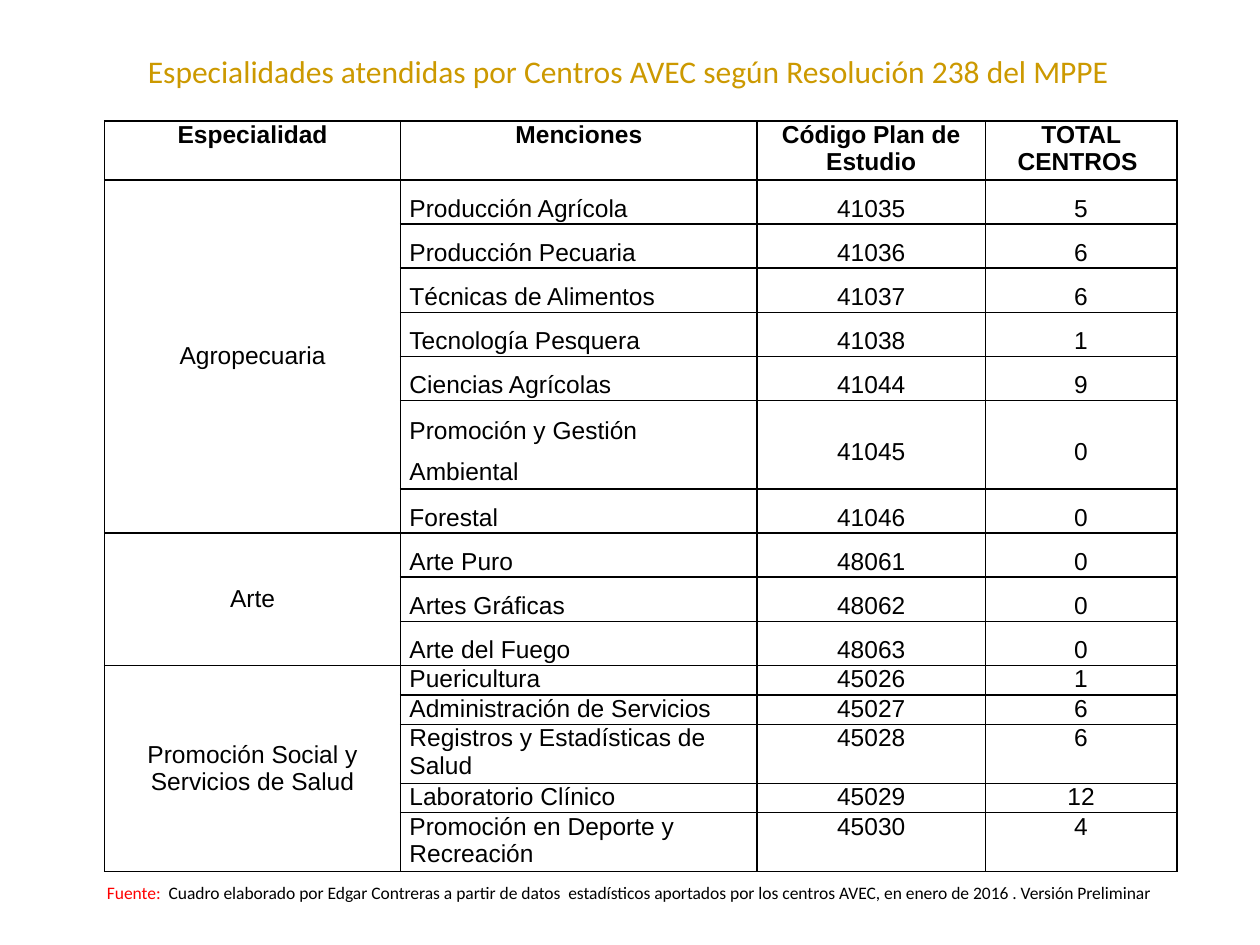
"""Build a slide with the table of school specialities, study plan codes and centres."""
from lxml.etree import SubElement
from pptx import Presentation
from pptx.dml.color import RGBColor
from pptx.enum.text import MSO_ANCHOR, MSO_AUTO_SIZE, PP_ALIGN
from pptx.oxml.ns import qn
from pptx.util import Inches, Pt


def style(p, size, color, font, bold=False):
    for r in p.runs:
        r.font.size, r.font.name, r.font.bold = Pt(size), font, bold
        r.font.color.rgb = RGBColor.from_string(color)


def fill_cell(cell, text, align, anchor, spacing=1.0, bold=False):
    cell.text = text
    cell.margin_left = cell.margin_right = Inches(0.07)
    cell.margin_top = cell.margin_bottom = 0
    cell.vertical_anchor = anchor
    p = cell.text_frame.paragraphs[0]
    p.alignment, p.line_spacing = align, spacing
    style(p, 14, "000000", "Arial", bold)


HEADERS = ["Especialidad", "Menciones", "Código Plan de Estudio", "TOTAL CENTROS "]
GROUPS = [
    ("Agropecuaria", 1.5, [
        ("Producción Agrícola", 41035, 5), ("Producción Pecuaria", 41036, 6),
        ("Técnicas de Alimentos", 41037, 6), ("Tecnología Pesquera", 41038, 1),
        ("Ciencias Agrícolas", 41044, 9), ("Promoción y Gestión Ambiental", 41045, 0),
        ("Forestal", 41046, 0)]),
    ("Arte", 1.5, [
        ("Arte Puro", 48061, 0), ("Artes Gráficas", 48062, 0), ("Arte del Fuego", 48063, 0)]),
    ("Promoción Social y Servicios de Salud", 1.0, [
        ("Puericultura", 45026, 1), ("Administración de Servicios", 45027, 6),
        ("Registros y Estadísticas de Salud", 45028, 6), ("Laboratorio Clínico", 45029, 12),
        ("Promoción en Deporte y Recreación", 45030, 4)]),
]
COL_WIDTHS = [2.35, 2.83, 1.81, 1.52]
LINE_HEIGHT = 5.96 / 25.5
WRAP_LENGTH = 28

prs = Presentation()
prs.slide_width, prs.slide_height = Inches(10), Inches(7.5)
s = prs.slides.add_slide(prs.slide_layouts[5])

row_count = 1 + sum(len(group[2]) for group in GROUPS)
table = s.shapes.add_table(row_count, len(HEADERS), Inches(0.83), Inches(0.96),
                           Inches(sum(COL_WIDTHS)), Inches(25.5 * LINE_HEIGHT)).table
table.first_row = table.horz_banding = False
for column, width in zip(table.columns, COL_WIDTHS):
    column.width = Inches(width)

table.rows[0].height = Inches(2 * LINE_HEIGHT)
for col, header in enumerate(HEADERS):
    fill_cell(table.cell(0, col), header, PP_ALIGN.CENTER, MSO_ANCHOR.TOP, bold=True)

row = 1
for name, spacing, entries in GROUPS:
    table.cell(row, 0).merge(table.cell(row + len(entries) - 1, 0))
    fill_cell(table.cell(row, 0), name, PP_ALIGN.CENTER, MSO_ANCHOR.MIDDLE)
    anchor = MSO_ANCHOR.MIDDLE if spacing > 1 else MSO_ANCHOR.TOP
    for entry in entries:
        lines = 2 if len(entry[0]) > WRAP_LENGTH else 1
        table.rows[row].height = Inches(lines * spacing * LINE_HEIGHT)
        for col, value in enumerate(entry, start=1):
            align = PP_ALIGN.LEFT if col == 1 else PP_ALIGN.CENTER
            fill_cell(table.cell(row, col), str(value), align, anchor, spacing)
        row += 1

for cell in table.iter_cells():
    tc_pr = cell._tc.get_or_add_tcPr()
    for side in ("a:lnL", "a:lnR", "a:lnT", "a:lnB"):
        line = SubElement(tc_pr, qn(side), w=str(Pt(1)))
        SubElement(SubElement(line, qn("a:solidFill")), qn("a:srgbClr"), val="000000")
    cell.fill.background()

source = s.shapes.add_textbox(Inches(0.75), Inches(6.95), Inches(8.68), Inches(0.27))
tf = source.text_frame
tf.word_wrap, tf.auto_size = False, MSO_AUTO_SIZE.SHAPE_TO_FIT_TEXT
p = tf.paragraphs[0]
p.add_run().text = "Fuente:  "
p.add_run().text = ("Cuadro elaborado por Edgar Contreras a partir de datos  estadísticos aportados "
                    "por los centros AVEC, en enero de 2016 . Versión Preliminar")
style(p, 10, "000000", "Calibri")
p.runs[0].font.color.rgb = RGBColor.from_string("FF0000")

title = s.shapes.title
title.left, title.top, title.width, title.height = map(Inches, (0.83, 0.36, 8.43, 0.4))
tf = title.text_frame
tf.text = "Especialidades atendidas por Centros AVEC según Resolución 238 del MPPE  "
tf.word_wrap, tf.auto_size = True, MSO_AUTO_SIZE.SHAPE_TO_FIT_TEXT
tf.vertical_anchor = MSO_ANCHOR.TOP
tf.paragraphs[0].alignment = PP_ALIGN.CENTER
style(tf.paragraphs[0], 18, "CC9900", "Calibri")

prs.save("out.pptx")
